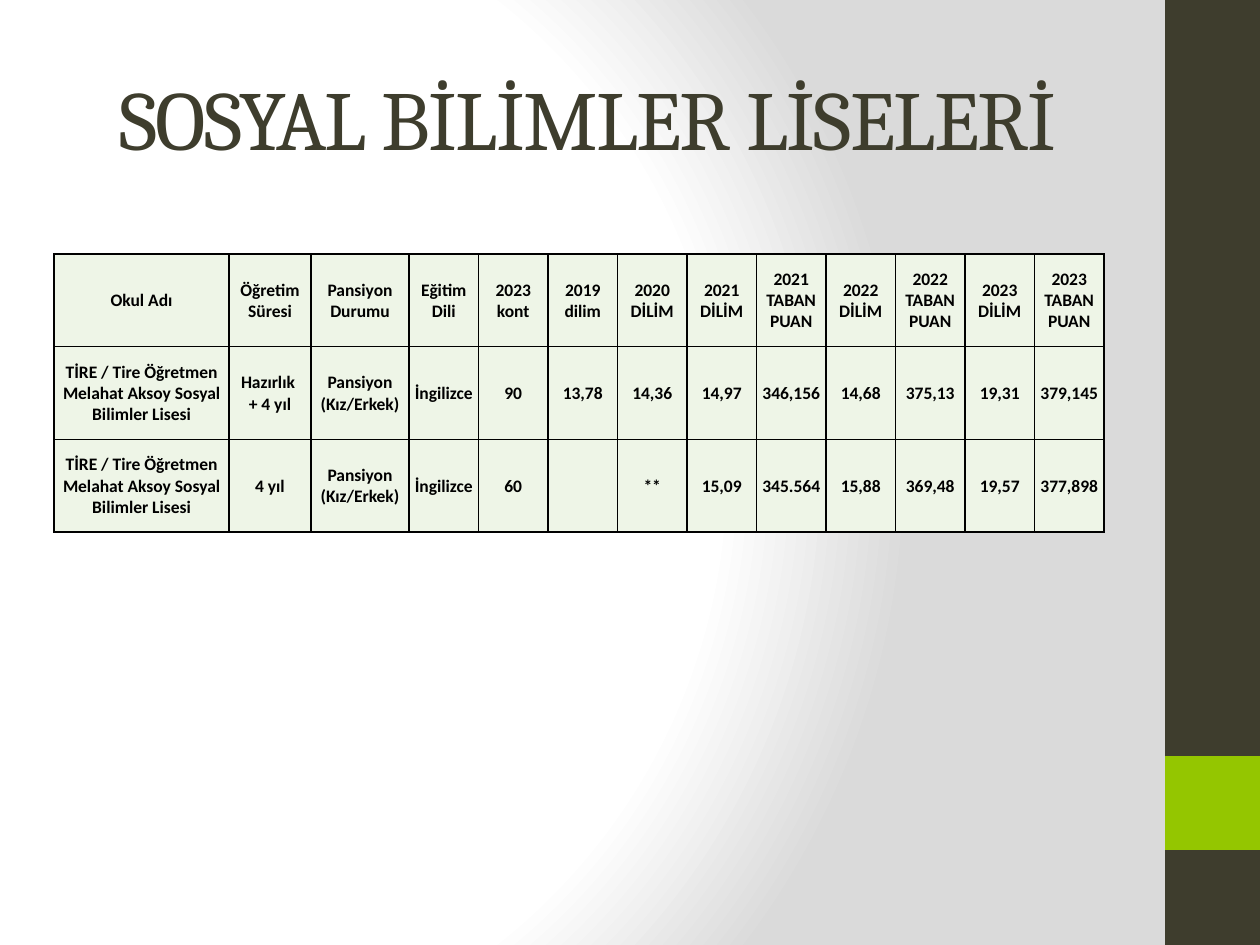
from lxml import etree
from pptx import Presentation
from pptx.dml.color import RGBColor
from pptx.enum.shapes import MSO_SHAPE
from pptx.enum.text import MSO_ANCHOR, PP_ALIGN
from pptx.oxml import parse_xml
from pptx.oxml.ns import nsdecls, qn
from pptx.util import Pt

RECT = MSO_SHAPE.RECTANGLE
MIDDLE = MSO_ANCHOR.MIDDLE
CENTER = PP_ALIGN.CENTER
SCALE = 914400 / 126
DARK = "3E3D2D"
LIME = "94C600"
PALE = "EEF5E7"
BLACK = "000000"

SCHOOL = "TİRE / Tire Öğretmen Melahat Aksoy Sosyal Bilimler Lisesi"
BOARD = "Pansiyon\n(Kız/Erkek)"
ROWS = [
    ["Okul Adı", "Öğretim Süresi", "Pansiyon Durumu", "Eğitim Dili", "2023\nkont",
     "2019 dilim", "2020 DİLİM", "2021\nDİLİM", "2021 TABAN PUAN", "2022\nDİLİM",
     "2022 TABAN PUAN", "2023\nDİLİM", "2023 TABAN PUAN"],
    [SCHOOL, "Hazırlık \n+ 4 yıl", BOARD, "İngilizce", "90", "13,78", "14,36",
     "14,97", "346,156", "14,68", "375,13", "19,31", "379,145"],
    [SCHOOL, "4 yıl", BOARD, "İngilizce", "60", "", "**",
     "15,09", "345.564", "15,88", "369,48", "19,57", "377,898"],
]


def px(n):
    return round(n * SCALE)


def color(code):
    return RGBColor.from_string(code)


def write(frame, text, font="Calibri", size=10, ink=BLACK, bold=False, space=0):
    frame.word_wrap = True
    para = frame.paragraphs[0]
    para.text = text
    para.alignment = CENTER
    for run in para.runs:
        run.font.name = font
        run.font.size = Pt(size)
        run.font.bold = bold
        run.font.color.rgb = color(ink)
        if space:
            run.font._element.set("spc", str(space * 100))


def backdrop(slide):
    stops = "".join(
        f'<a:gs pos="{pos * 1000}"><a:srgbClr val="{code}"/></a:gs>'
        for pos, code in [(0, "FFFFFF"), (75, "FFFFFF"), (100, "DADADA")])
    slide.element.cSld.insert(0, parse_xml(
        f'<p:bg {nsdecls("p", "a")}><p:bgPr><a:gradFill rotWithShape="1">'
        f'<a:gsLst>{stops}</a:gsLst><a:path path="circle">'
        '<a:fillToRect l="20000" t="50000" r="100000" b="50000"/></a:path>'
        '</a:gradFill><a:effectLst/></p:bgPr></p:bg>'))


def block(slide, left, top, width, height, fill):
    shape = slide.shapes.add_shape(RECT, px(left), px(top), px(width), px(height))
    shape.shadow.inherit = False
    shape.fill.solid()
    shape.fill.fore_color.rgb = color(fill)
    shape.line.fill.background()


def heading(slide, text):
    title = slide.shapes.title
    title.left, title.top = px(63), px(38)
    title.width, title.height = px(1050), px(157)
    title.text_frame.vertical_anchor = MIDDLE
    write(title.text_frame, text, font="Cambria", size=48, ink=DARK, space=-1)


def border(cell):
    props = cell._tc.get_or_add_tcPr()
    for spot, side in enumerate(["lnL", "lnR", "lnT", "lnB"]):
        line = etree.Element(qn(f"a:{side}"), w=str(Pt(1)))
        fill = etree.SubElement(line, qn("a:solidFill"))
        etree.SubElement(fill, qn("a:srgbClr"), val=BLACK)
        props.insert(spot, line)


def fill_cell(cell, text):
    cell.margin_left = cell.margin_right = cell.margin_top = px(1)
    cell.margin_bottom = 0
    cell.vertical_anchor = MIDDLE
    cell.fill.solid()
    cell.fill.fore_color.rgb = color(PALE)
    border(cell)
    write(cell.text_frame, text, bold=True)


def score_table(slide):
    table = slide.shapes.add_table(
        len(ROWS), len(ROWS[0]), px(54), px(254), px(1050), px(278)).table
    table.first_row = table.horz_banding = False
    wide = [px(175), px(82), px(98)]
    rest = len(ROWS[0]) - len(wide)
    even = (px(1050) - sum(wide)) // rest
    for col, width in zip(table.columns, wide + [even] * rest):
        col.width = width
    for r, row in enumerate(ROWS):
        for c, text in enumerate(row):
            fill_cell(table.cell(r, c), text)


def main():
    deck = Presentation()
    deck.slide_width, deck.slide_height = px(1260), px(945)
    slide = deck.slides.add_slide(deck.slide_layouts[5])
    backdrop(slide)
    block(slide, 1165, 0, 95, 945, DARK)
    block(slide, 1165, 756, 95, 94, LIME)
    heading(slide, "SOSYAL BİLİMLER LİSELERİ")
    score_table(slide)
    deck.save("out.pptx")


if __name__ == "__main__":
    main()
